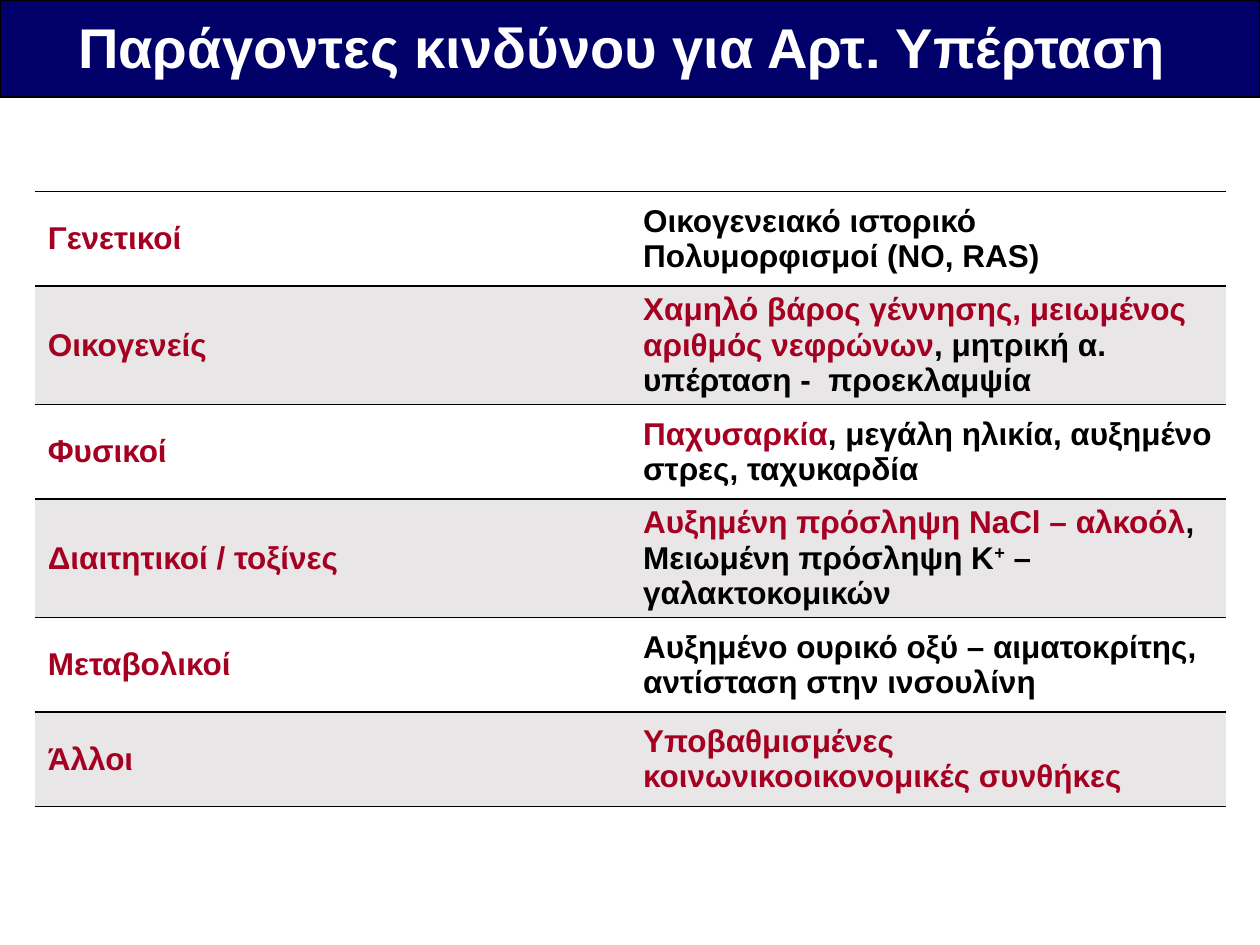
from lxml.etree import SubElement
from pptx import Presentation
from pptx.dml.color import RGBColor
from pptx.enum.shapes import MSO_SHAPE
from pptx.enum.text import MSO_ANCHOR, PP_ALIGN
from pptx.oxml.ns import qn
from pptx.util import Inches, Pt

HUES = {"red": "A50021", "black": "000000", "white": "FFFFFF",
        "navy": "000068", "band": "E9E6E7"}

# Each row: risk group, then paragraphs of (text, colour) runs
ROWS = [
    ("Γενετικοί", [[("Οικογενειακό ιστορικό", "black")],
                   [("Πολυμορφισμοί (ΝΟ, RAS)", "black")]]),
    ("Οικογενείς", [[("Χαμηλό βάρος γέννησης, μειωμένος αριθμός νεφρώνων", "red"),
                     (", μητρική α. υπέρταση -  προεκλαμψία", "black")]]),
    ("Φυσικοί", [[("Παχυσαρκία", "red"),
                  (", μεγάλη ηλικία, αυξημένο στρες, ταχυκαρδία", "black")]]),
    ("Διαιτητικοί / τοξίνες", [[("Αυξημένη πρόσληψη NaCl – αλκοόλ", "red"),
                                (",", "black")],
                               [("Μειωμένη πρόσληψη Κ", "black"), ("+", "black"),
                                (" – γαλακτοκομικών", "black")]]),
    ("Μεταβολικοί", [[("Αυξημένο ουρικό οξύ – αιματοκρίτης, "
                       "αντίσταση στην ινσουλίνη", "black")]]),
    ("Άλλοι", [[("Υποβαθμισμένες κοινωνικοοικονομικές συνθήκες", "red")]]),
]


def write(frame, paras, size):
    """Fill a text frame with paragraphs of coloured bold runs."""
    for i, runs in enumerate(paras):
        para = frame.add_paragraph() if i else frame.paragraphs[0]
        for text, hue in runs:
            run = para.add_run()
            run.text = text
            style = {"name": "Arial", "size": Pt(size), "bold": True}
            for key, value in style.items():
                setattr(run.font, key, value)
            run.font.color.rgb = RGBColor.from_string(HUES[hue])
            if text == "+":
                run._r.get_or_add_rPr().set("baseline", "30000")


def rule(cell):
    """Draw black lines above and below a cell, none at its sides."""
    props = cell._tc.get_or_add_tcPr()
    for side in ("lnL", "lnR"):
        SubElement(SubElement(props, qn(f"a:{side}")), qn("a:noFill"))
    for side in ("lnT", "lnB"):
        line = SubElement(props, qn(f"a:{side}"), w=str(Pt(1)))
        fill = SubElement(line, qn("a:solidFill"))
        SubElement(fill, qn("a:srgbClr"), val=HUES["black"])


deck = Presentation()
deck.slide_width, deck.slide_height = Inches(10), Inches(7.5)
slide = deck.slides.add_slide(deck.slide_layouts[6])

# Risk factor table
table = slide.shapes.add_table(len(ROWS), 2, Inches(0.28), Inches(1.52),
                               Inches(9.45), Inches(4.5)).table
table.first_row = table.horz_banding = False
for r, (group, factors) in enumerate(ROWS):
    for c, paras in enumerate(([[(group, "red")]], factors)):
        cell = table.cell(r, c)
        cell.vertical_anchor = MSO_ANCHOR.MIDDLE
        write(cell.text_frame, paras, 18)
        rule(cell)
        if r % 2:
            cell.fill.solid()
            cell.fill.fore_color.rgb = RGBColor.from_string(HUES["band"])
        else:
            cell.fill.background()
for row, high in zip(table.rows, (0.75, 0.94, 0.75, 0.94, 0.75, 0.75)):
    row.height = Inches(high)

# Title banner
head = slide.shapes.add_group_shape()
bar = head.shapes.add_shape(MSO_SHAPE.RECTANGLE, 0, 0, Inches(10), Inches(0.77))
bar.shadow.inherit = False
bar.fill.solid()
bar.fill.fore_color.rgb = RGBColor.from_string(HUES["navy"])
bar.line.color.rgb = RGBColor.from_string(HUES["black"])
bar.line.width = Pt(0.75)

title = head.shapes.add_textbox(0, Inches(0.05), Inches(10), Inches(0.64))
frame = title.text_frame
frame.word_wrap = True
write(frame, [[("Παράγοντες κινδύνου για Αρτ. Υπέρταση ", "white")]], 32)
frame.paragraphs[0].alignment = PP_ALIGN.CENTER
frame.paragraphs[0].space_after = Pt(6)

deck.save("out.pptx")
